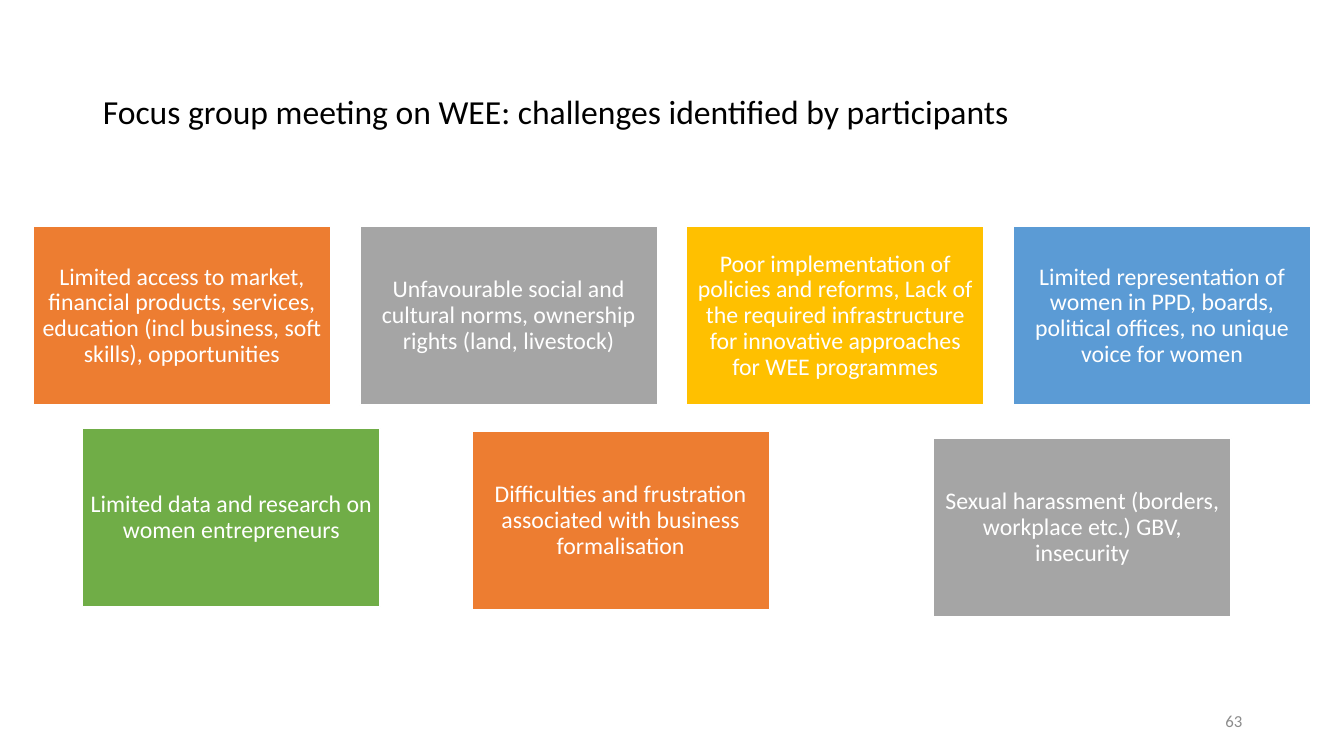
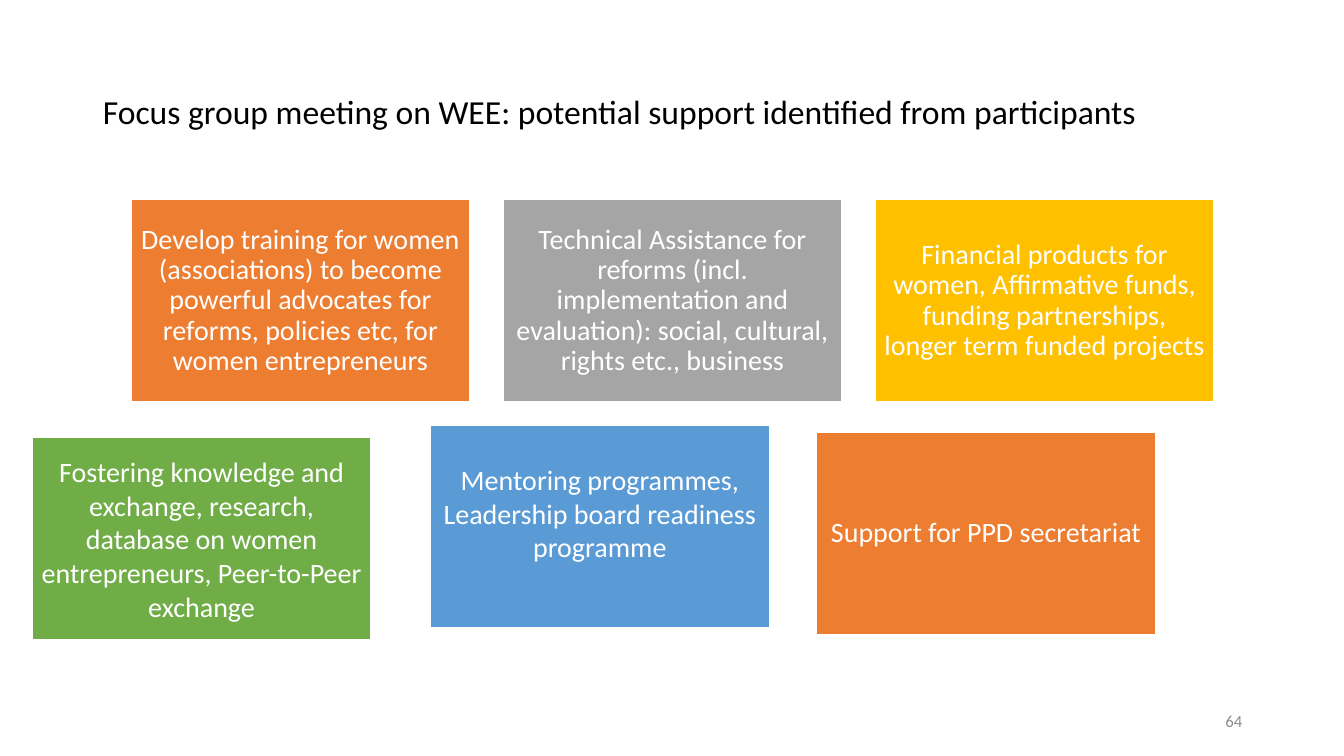
"""Build two focus group slides with coloured cards."""
from pptx import Presentation
from pptx.dml.color import RGBColor
from pptx.enum.shapes import MSO_SHAPE
from pptx.enum.text import MSO_ANCHOR, MSO_AUTO_SIZE, PP_ALIGN
from pptx.util import Inches, Pt

RECTANGLE = MSO_SHAPE.RECTANGLE
MIDDLE = MSO_ANCHOR.MIDDLE
NO_AUTOFIT = MSO_AUTO_SIZE.NONE
LEFT, CENTER, RIGHT = PP_ALIGN.LEFT, PP_ALIGN.CENTER, PP_ALIGN.RIGHT

FONT = "Calibri"
BLACK = RGBColor(0x00, 0x00, 0x00)
WHITE = RGBColor(0xFF, 0xFF, 0xFF)
NUMBER_GRAY = RGBColor(0x8C, 0x8C, 0x8C)
ORANGE = RGBColor(0xED, 0x7D, 0x31)
GRAY = RGBColor(0xA5, 0xA5, 0xA5)
YELLOW = RGBColor(0xFF, 0xC0, 0x00)
BLUE = RGBColor(0x5B, 0x9B, 0xD5)
GREEN = RGBColor(0x70, 0xAD, 0x47)

TITLE_LAYOUT = 5
TIGHT = 0.9

CHALLENGE_ROW = [
    (ORANGE, "Limited access to market, financial products, services, "
             "education (incl business, soft skills), opportunities"),
    (GRAY, "Unfavourable social and cultural norms, ownership rights (land, livestock)"),
    (YELLOW, "Poor implementation of policies and reforms, Lack of the required "
             "infrastructure for innovative approaches for WEE programmes"),
    (BLUE, "Limited representation of women in PPD, boards, political offices, "
           "no unique voice for women"),
]
CHALLENGE_LOWER = [
    (0.82, 4.25, GREEN, "Limited data and research on women entrepreneurs"),
    (4.68, 4.28, ORANGE, "Difficulties and frustration associated with business formalisation"),
    (9.26, 4.35, GRAY, "Sexual harassment (borders, workplace etc.) GBV, insecurity"),
]
SUPPORT_ROW = [
    (ORANGE, "Develop training for women (associations) to become powerful "
             "advocates for reforms, policies etc, for women entrepreneurs"),
    (GRAY, "Technical Assistance for reforms (incl. implementation and "
           "evaluation): social, cultural, rights etc., business"),
    (YELLOW, "Financial products for women, Affirmative funds, funding "
             "partnerships, longer term funded projects"),
]


def write_text(shape, text, *, size, color, align=LEFT, spacing=1.0, inset=None, bottom=None):
    """Fill a shape with one formatted, vertically centred paragraph."""
    frame = shape.text_frame
    frame.word_wrap = True
    frame.auto_size = NO_AUTOFIT
    frame.vertical_anchor = MIDDLE
    if inset is not None:
        frame.margin_left = frame.margin_right = frame.margin_top = Inches(inset)
        frame.margin_bottom = Inches(inset if bottom is None else bottom)
    frame.text = text
    paragraph = frame.paragraphs[0]
    paragraph.alignment = align
    paragraph.line_spacing = spacing
    font = paragraph.runs[0].font
    font.name, font.size = FONT, Pt(size)
    font.color.rgb = color


def add_titled_slide(presentation, title, number):
    """Add a slide with its title and slide number."""
    slide = presentation.slides.add_slide(presentation.slide_layouts[TITLE_LAYOUT])
    heading = slide.shapes.title
    heading.left, heading.top = Inches(0.92), Inches(0.4)
    heading.width, heading.height = Inches(11.5), Inches(1.45)
    write_text(heading, title, size=24, color=BLACK, spacing=TIGHT)
    box = slide.shapes.add_textbox(Inches(9.42), Inches(6.95), Inches(3), Inches(0.4))
    write_text(box, str(number), size=12, color=NUMBER_GRAY, align=RIGHT)
    return slide


def add_card(slide, left, top, color, text, *, card_size, **text_format):
    """Add a coloured rectangle with centred white text."""
    width, height = card_size
    card = slide.shapes.add_shape(
        RECTANGLE, Inches(left), Inches(top), Inches(width), Inches(height))
    card.shadow.inherit = False
    card.fill.solid()
    card.fill.fore_color.rgb = color
    card.line.color.rgb = WHITE
    card.line.width = Pt(1)
    write_text(card, text, color=WHITE, align=CENTER, **{"spacing": TIGHT, **text_format})


def add_card_row(slide, left, top, pitch, cards, **card_format):
    """Add cards at an equal pitch along one row."""
    for index, (color, text) in enumerate(cards):
        add_card(slide, left + index * pitch, top, color, text, **card_format)


def build_challenges(presentation):
    """Build the slide of challenges."""
    slide = add_titled_slide(
        presentation, "Focus group meeting on WEE: challenges identified by participants", 63)
    card_format = {"card_size": (2.95, 1.77), "size": 17, "inset": 0.07}
    add_card_row(slide, 0.33, 2.25, 3.24, CHALLENGE_ROW, **card_format)
    for card in CHALLENGE_LOWER:
        add_card(slide, *card, **card_format)


def build_support(presentation):
    """Build the slide of potential support."""
    slide = add_titled_slide(
        presentation,
        "Focus group meeting on WEE: potential support identified from participants", 64)
    card_format = {"card_size": (3.36, 2.01), "size": 20, "inset": 0.08}
    add_card_row(slide, 1.3, 1.98, 3.69, SUPPORT_ROW, **card_format)
    add_card(slide, 0.32, 4.34, GREEN,
             "Fostering knowledge and exchange, research, database on women "
             "entrepreneurs, Peer-to-Peer exchange", spacing=1.0, **card_format)
    add_card(slide, 4.27, 4.22, BLUE,
             "Mentoring programmes, Leadership board readiness programme",
             spacing=1.0, bottom=0.35, **card_format)
    add_card(slide, 8.1, 4.29, ORANGE, "Support for PPD secretariat", **card_format)


def main():
    """Create and save the presentation."""
    presentation = Presentation()
    presentation.slide_width, presentation.slide_height = Inches(13.33), Inches(7.5)
    build_challenges(presentation)
    build_support(presentation)
    presentation.save("out.pptx")


if __name__ == "__main__":
    main()
